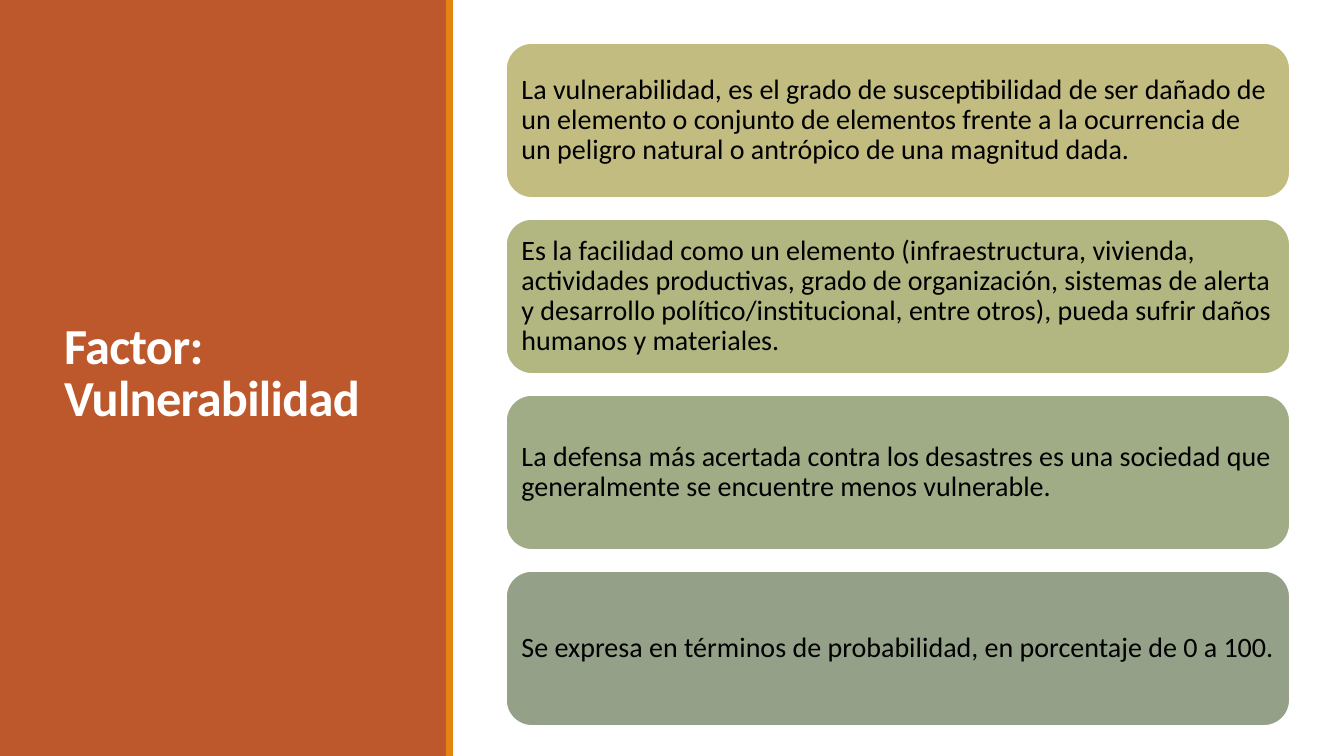
from dataclasses import dataclass

from pptx import Presentation
from pptx.dml.color import RGBColor
from pptx.enum.shapes import MSO_SHAPE as Shape
from pptx.enum.text import MSO_ANCHOR as Anchor, MSO_AUTO_SIZE as AutoSize, PP_ALIGN as Align
from pptx.util import Emu, Pt

SLIDE_W, SLIDE_H = 1344, 756
EMU_PER_PX = 12192000 / SLIDE_W


@dataclass(frozen=True)
class Theme:
    font: str = "Calibri"
    panel: str = "BD582C"
    stripe: str = "E48312"
    light: str = "FFFFFF"
    text: str = "000000"
    title_size: int = 36
    card_size: int = 20
    card_line: float = 1.25


@dataclass(frozen=True)
class Box:
    left: int
    top: int
    width: int
    height: int


@dataclass(frozen=True)
class Card:
    fill: str
    text: str


THEME = Theme()
PANEL = Box(0, 0, 446, SLIDE_H)
STRIPE = Box(446, 0, 7, SLIDE_H)
TITLE = Box(54, 57, 340, 636)
FIRST_CARD = Box(506, 43, 784, 155)
CARD_PITCH = 176
CARD_INSET = 8

CARDS = [
    Card("C2BC80", "La vulnerabilidad, es el grado de susceptibilidad de ser dañado de un elemento "
         "o conjunto de elementos frente a la ocurrencia de un peligro natural o antrópico "
         "de una magnitud dada."),
    Card("B2B782", "Es la facilidad como un elemento (infraestructura, vivienda, actividades "
         "productivas, grado de organización, sistemas de alerta y desarrollo "
         "político/institucional, entre otros), pueda sufrir daños humanos y materiales."),
    Card("A0AC85", "La defensa más acertada contra los desastres es una sociedad que "
         "generalmente se encuentre menos vulnerable."),
    Card("94A088", "Se expresa en términos de probabilidad, en porcentaje de 0 a 100."),
]


def px(n: int) -> Emu:
    return Emu(round(n * EMU_PER_PX))


def place(box: Box) -> tuple[Emu, Emu, Emu, Emu]:
    return px(box.left), px(box.top), px(box.width), px(box.height)


def add_block(slide, kind: Shape, box: Box, fill: str):
    sp = slide.shapes.add_shape(kind, *place(box))
    sp.shadow.inherit = False
    sp.fill.solid()
    sp.fill.fore_color.rgb = RGBColor.from_string(fill)
    sp.line.fill.background()
    return sp


def write(sp, text: str, size: int, color: str, spacing: float, bold: bool = False) -> None:
    tf = sp.text_frame
    tf.word_wrap = True
    tf.auto_size = AutoSize.NONE
    tf.vertical_anchor = Anchor.MIDDLE
    p = tf.paragraphs[0]
    p.text = text
    p.alignment = Align.LEFT
    p.line_spacing = spacing
    p.font.name = THEME.font
    p.font.size = Pt(size)
    p.font.bold = bold
    p.font.color.rgb = RGBColor.from_string(color)


def add_title(slide, text: str) -> None:
    sp = slide.shapes.title
    sp.left, sp.top, sp.width, sp.height = place(TITLE)
    write(sp, text, THEME.title_size, THEME.light, 0.85, bold=True)
    # Tighter letter spacing, in hundredths of a point
    r = sp.text_frame.paragraphs[0].runs[0]
    r._r.get_or_add_rPr().set("spc", "-50")
    # Bring the title in front of the panel
    slide.shapes._spTree.append(sp._element)


def add_card(slide, index: int, card: Card) -> None:
    box = Box(FIRST_CARD.left, FIRST_CARD.top + index * CARD_PITCH,
              FIRST_CARD.width, FIRST_CARD.height)
    sp = add_block(slide, Shape.ROUNDED_RECTANGLE, box, card.fill)
    sp.line.color.rgb = RGBColor.from_string(THEME.light)
    sp.line.width = Pt(THEME.card_line)
    tf = sp.text_frame
    tf.margin_left = tf.margin_right = tf.margin_top = tf.margin_bottom = px(CARD_INSET)
    write(sp, card.text, THEME.card_size, THEME.text, 0.9)


def main() -> None:
    prs = Presentation()
    prs.slide_width, prs.slide_height = px(SLIDE_W), px(SLIDE_H)
    slide = prs.slides.add_slide(prs.slide_layouts.get_by_name("Title Only"))

    # Left panel with the title
    add_block(slide, Shape.RECTANGLE, PANEL, THEME.panel)
    add_title(slide, "Factor: Vulnerabilidad")
    add_block(slide, Shape.RECTANGLE, STRIPE, THEME.stripe)

    # Stack of cards
    for index, card in enumerate(CARDS):
        add_card(slide, index, card)

    prs.save("out.pptx")


if __name__ == "__main__":
    main()
